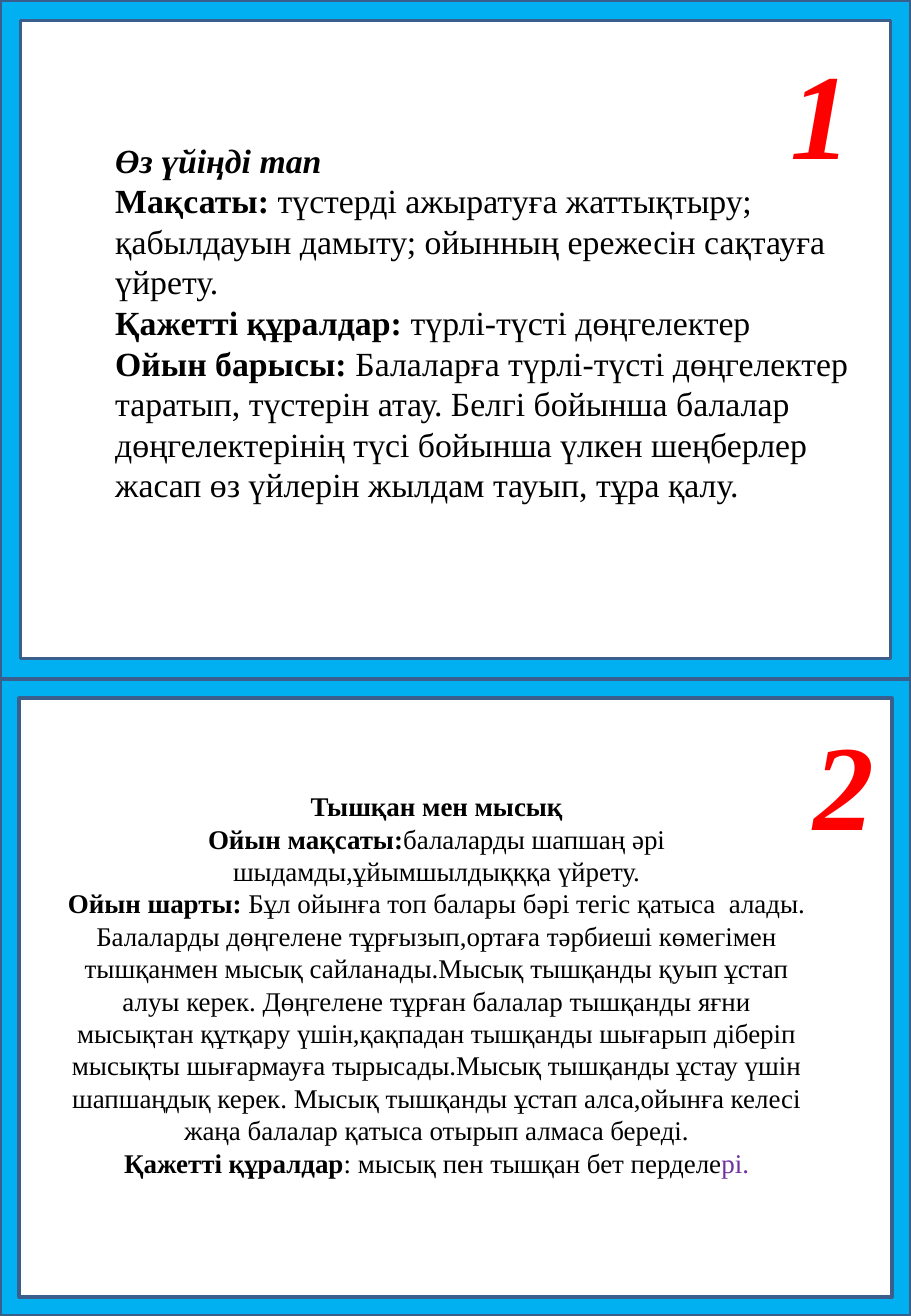
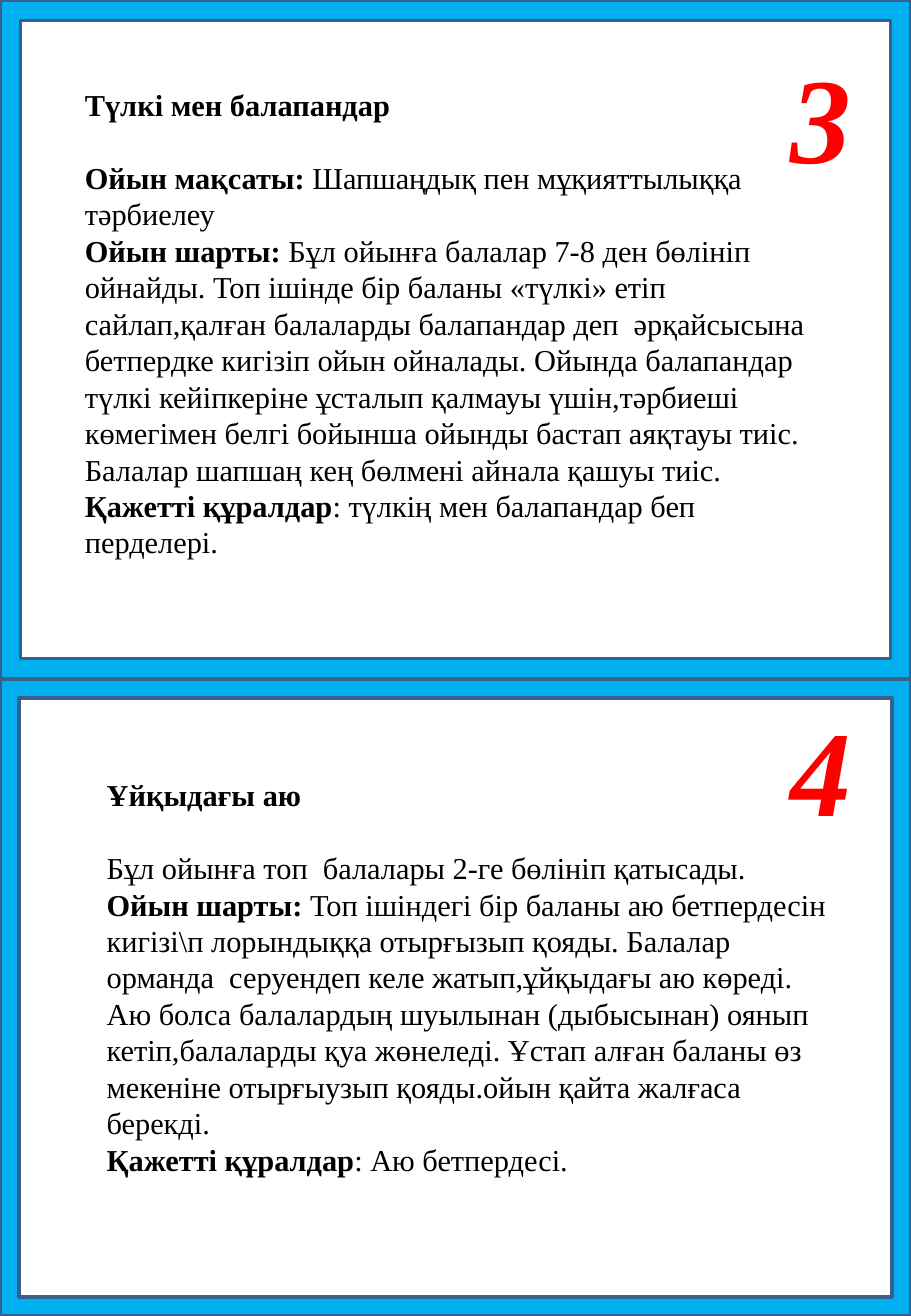
import pptx
import pptx.util
import pptx.dml.color
import pptx.enum.shapes
import pptx.enum.text

ALIGN = pptx.enum.text.PP_ALIGN
FRAME = pptx.enum.shapes.MSO_SHAPE.FRAME
FONT = "Times New Roman"
BLACK, RED, PURPLE = "000000", "FF0000", "7030A0"
BAND, EDGE = "00B0F0", "3A5F8C"
LEADING = 1.2

prs = pptx.Presentation()
prs.slide_width = pptx.util.Inches(7.5)
prs.slide_height = pptx.util.Inches(10.83)

# Grid: 75 columns by 100 rows; each slide holds two cards
COL = prs.slide_width / 75
ROW = prs.slide_height / 100
CARDS = [(0, 51.6), (51.6, 48.4)]


def rgb(hex_color):
    return pptx.dml.color.RGBColor.from_string(hex_color)


def add_text(slide, box, paragraphs, size, color=BLACK, align=ALIGN.LEFT,
             italic_title=False, title_gap=0):
    """Asterisks in a paragraph switch bold on and off."""
    left, top, width, height = box
    sp = slide.shapes.add_textbox(int(left * COL), int(top * ROW),
                                  int(width * COL), int(height * ROW))
    tf = sp.text_frame
    tf.word_wrap = True
    tf.auto_size = pptx.enum.text.MSO_AUTO_SIZE.SHAPE_TO_FIT_TEXT
    for i, text in enumerate(paragraphs):
        p = tf.paragraphs[0] if i == 0 else tf.add_paragraph()
        p.alignment = align
        p.line_spacing = pptx.util.Pt(size * LEADING)
        p.space_after = pptx.util.Pt(title_gap if i == 0 else 0)
        for n, part in enumerate(text.split("*")):
            if part:
                r = p.add_run()
                r.text = part
                r.font.name = FONT
                r.font.size = pptx.util.Pt(size)
                r.font.bold = n % 2 == 1
                r.font.italic = italic_title and i == 0
                r.font.color.rgb = rgb(color)
    return tf


# Games: text box, number position, format and wording
games = [
    dict(box=(8.5, 10.16, 66.1, 28.9), number_at=(62.3, 2.4),
         style=dict(size=20, italic_title=True),
         text=[
             "*Өз үйіңді тап*",
             "*Мақсаты:* түстерді ажыратуға жаттықтыру; қабылдауын дамыту; "
             "ойынның ережесін сақтауға үйрету.",
             "*Қажетті құралдар: *түрлі-түсті дөңгелектер",
             "*Ойын барысы: *Балаларға түрлі-түсті дөңгелектер таратып, түстерін "
             "атау. Белгі бойынша балалар дөңгелектерінің түсі бойынша үлкен "
             "шеңберлер жасап өз үйлерін жылдам тауып, тұра қалу.",
         ]),
    dict(box=(4.3, 59.56, 63.3, 30.75), number_at=(64.2, 53.46),
         style=dict(size=16, align=ALIGN.CENTER), ending="рі.",
         text=[
             "*Тышқан мен мысық*",
             "*Ойын мақсаты:*балаларды шапшаң әрі шыдамды,ұйымшылдықққа үйрету.",
             "*Ойын шарты:* Бұл ойынға топ балары бәрі тегіс қатыса  алады. "
             "Балаларды дөңгелене тұрғызып,ортаға тәрбиеші көмегімен тышқанмен "
             "мысық сайланады.Мысық тышқанды қуып ұстап алуы керек. Дөңгелене "
             "тұрған балалар тышқанды яғни мысықтан құтқару үшін,қақпадан "
             "тышқанды шығарып діберіп мысықты шығармауға тырысады.Мысық "
             "тышқанды ұстау үшін шапшаңдық керек. Мысық тышқанды ұстап "
             "алса,ойынға келесі жаңа балалар қатыса отырып алмаса береді.",
             "*Қажетті құралдар*: мысық пен тышқан бет перделе",
         ]),
    dict(box=(6, 6.09, 63.8, 36.9), number_at=(62.3, 2.77),
         style=dict(size=18, title_gap=18 * LEADING),
         text=[
             "*Түлкі мен балапандар*",
             "*Ойын мақсаты: *Шапшаңдық пен мұқияттылыққа тәрбиелеу",
             "*Ойын шарты:* Бұл ойынға балалар 7-8 ден бөлініп ойнайды. Топ "
             "ішінде бір баланы «түлкі» етіп сайлап,қалған балаларды балапандар "
             "деп  әрқайсысына бетпердке кигізіп ойын ойналады. Ойында "
             "балапандар түлкі кейіпкеріне ұсталып қалмауы үшін,тәрбиеші "
             "көмегімен белгі бойынша ойынды бастап аяқтауы тиіс. Балалар "
             "шапшаң кең бөлмені айнала қашуы тиіс.",
             "*Қажетті құралдар*: түлкің мен балапандар беп перделері.",
         ]),
    dict(box=(7.8, 58.54, 62, 31.67), number_at=(62.3, 52.35),
         style=dict(size=18, title_gap=18 * LEADING),
         text=[
             "*Ұйқыдағы аю*",
             "Бұл ойынға топ  балалары 2-ге бөлініп қатысады.",
             "*Ойын шарты:* Топ ішіндегі бір баланы аю бетпердесін кигізі\\п "
             "лорындыққа отырғызып қояды. Балалар орманда  серуендеп келе "
             "жатып,ұйқыдағы аю көреді. Аю болса балалардың шуылынан "
             "(дыбысынан) оянып кетіп,балаларды қуа жөнеледі. Ұстап алған "
             "баланы өз мекеніне отырғыузып қояды.ойын қайта жалғаса берекді.",
             "*Қажетті құралдар*: Аю бетпердесі.",
         ]),
]

for index, game in enumerate(games):
    if index % len(CARDS) == 0:
        s = prs.slides.add_slide(prs.slide_layouts[6])

    # Card frame
    top, height = CARDS[index % len(CARDS)]
    sp = s.shapes.add_shape(FRAME, 0, int(top * ROW),
                            prs.slide_width, int(height * ROW))
    sp.adjustments[0] = 0.03
    sp.shadow.inherit = False
    sp.fill.solid()
    sp.fill.fore_color.rgb = rgb(BAND)
    sp.line.color.rgb = rgb(EDGE)
    sp.line.width = pptx.util.Pt(2)

    # Game description, with a coloured ending where there is one
    tf = add_text(s, game["box"], game["text"], **game["style"])
    if "ending" in game:
        r = tf.paragraphs[-1].add_run()
        r.text = game["ending"]
        r.font.name = FONT
        r.font.size = pptx.util.Pt(game["style"]["size"])
        r.font.color.rgb = rgb(PURPLE)

    # Card number
    add_text(s, (*game["number_at"], 10.6, 12.1), [f"*{index + 1}*"], 72,
             color=RED, align=ALIGN.CENTER, italic_title=True)

prs.save("out.pptx")
